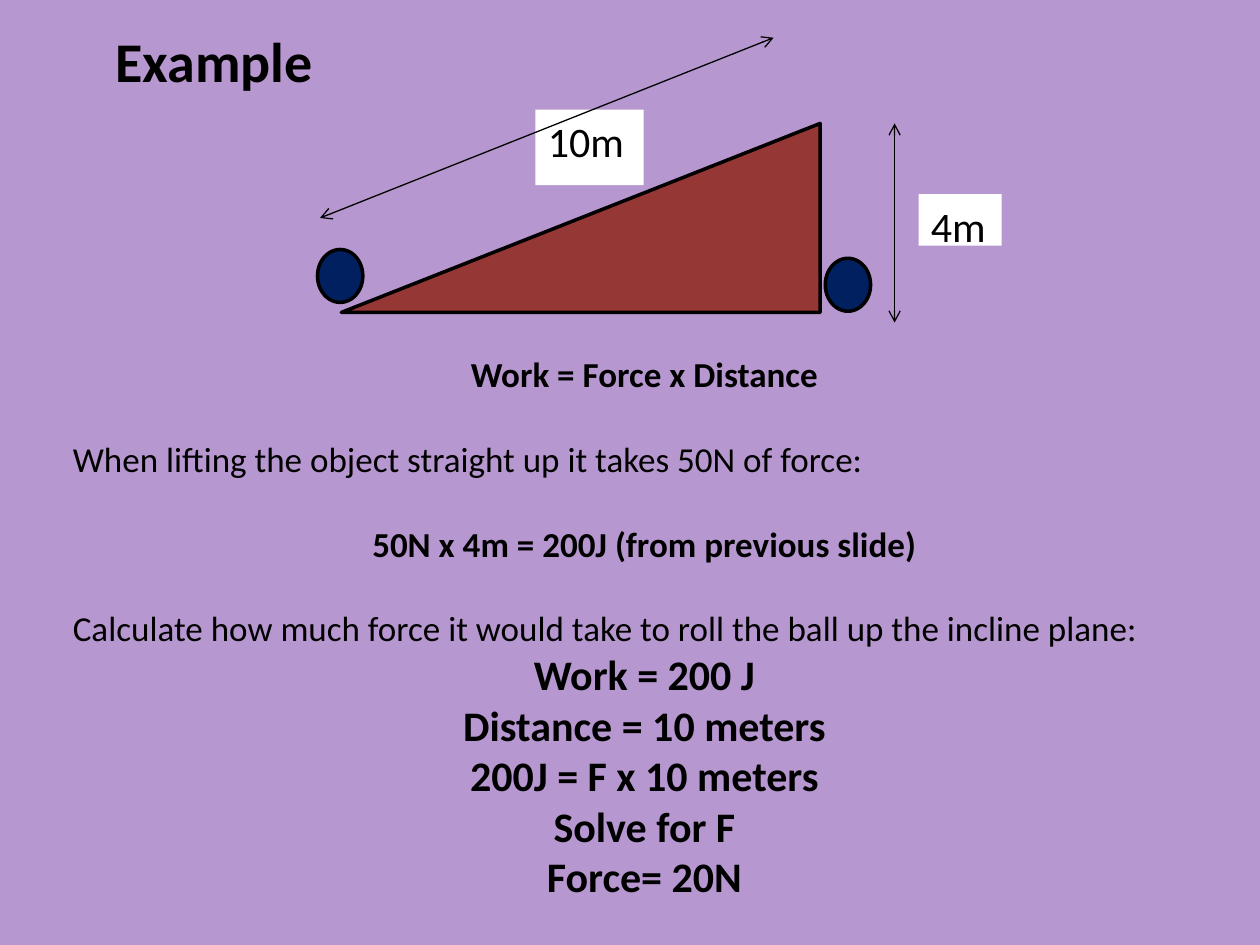
from lxml import etree
from pptx import Presentation
from pptx.dml.color import RGBColor
from pptx.enum import shapes, text
from pptx.oxml.ns import qn
from pptx.util import Inches, Pt

BLACK = RGBColor(0, 0, 0)
WHITE = RGBColor(255, 255, 255)
LILAC = RGBColor(0xB7, 0x97, 0xCF)
BROWN = RGBColor(0x95, 0x37, 0x35)
NAVY = RGBColor(0x00, 0x20, 0x60)

KIND = shapes.MSO_SHAPE
LEFT, MID = text.PP_ALIGN.LEFT, text.PP_ALIGN.CENTER
BALL = (0.36, 0.42)
GAP = 24.4  # one blank 20 pt line

# Text, size, bold, alignment, space before
STEPS = [
    ("Work = Force x Distance", 20, True, MID, 0),
    ("When lifting the object straight up it takes 50N of force:",
     20, False, LEFT, GAP),
    ("50N x 4m = 200J (from previous slide)", 20, True, MID, GAP),
    ("Calculate how much force it would take to roll the ball up "
     "the incline plane:", 20, False, LEFT, GAP),
] + [(line, 24, True, MID, 0) for line in (
    "Work = 200 J", "Distance = 10 meters", "200J = F x 10 meters",
    "Solve for F", "Force= 20N")]


def write(frame, lines):
    frame.word_wrap = True
    frame.vertical_anchor = text.MSO_ANCHOR.TOP
    for i, (words, size, bold, align, gap) in enumerate(lines):
        para = frame.add_paragraph() if i else frame.paragraphs[0]
        para.alignment, para.space_before = align, Pt(gap)
        run = para.add_run()
        run.text = words
        looks = {"name": "Calibri", "size": Pt(size), "bold": bold}
        for key, value in looks.items():
            setattr(run.font, key, value)
        run.font.color.rgb = BLACK


def add_form(parts, kind, box, fill, edge=True):
    form = parts.add_shape(kind, *map(Inches, box))
    form.shadow.inherit = False
    form.fill.solid()
    form.fill.fore_color.rgb = fill
    if edge:
        form.line.color.rgb = BLACK
        form.line.width = Pt(2)
    else:
        form.line.fill.background()
    return form


def add_label(parts, box, words):
    form = add_form(parts, KIND.RECTANGLE, box, WHITE, edge=False)
    write(form.text_frame, [(words, 24, False, LEFT, 0)])


def add_span(parts, start, end):
    """Dimension line with an open arrowhead at both ends."""
    line = parts.add_connector(shapes.MSO_CONNECTOR.STRAIGHT,
                               *map(Inches, start + end))
    line.line.color.rgb = BLACK
    line.line.width = Pt(0.75)
    for tag in ("a:headEnd", "a:tailEnd"):
        etree.SubElement(line.line._get_or_add_ln(), qn(tag), type="arrow")
    etree.SubElement(line.element.spPr, qn("a:effectLst"))


def add_text(parts, box, lines):
    write(parts.add_textbox(*map(Inches, box)).text_frame, lines)


def main():
    deck = Presentation()
    deck.slide_width, deck.slide_height = Inches(10), Inches(7.5)
    slide = deck.slides.add_slide(deck.slide_layouts[6])
    slide.background.fill.solid()
    slide.background.fill.fore_color.rgb = LILAC

    # Ramp diagram
    parts = slide.shapes.add_group_shape().shapes
    ramp = add_form(parts, KIND.RIGHT_TRIANGLE, (2.71, 0.98, 3.8, 1.5), BROWN)
    ramp.element.spPr.xfrm.set("flipH", "1")
    add_form(parts, KIND.OVAL, (2.52, 1.98) + BALL, NAVY)
    add_label(parts, (4.25, 0.87, 0.86, 0.6), "10m")
    add_span(parts, (2.54, 1.73), (6.14, 0.3))
    add_label(parts, (7.29, 1.54, 0.66, 0.41), "4m")
    add_span(parts, (7.1, 0.98), (7.1, 2.56))
    add_form(parts, KIND.OVAL, (6.55, 2.05) + BALL, NAVY)

    # Worked steps and title
    add_text(slide.shapes, (0.48, 2.75, 9.27, 4.48), STEPS)
    add_text(slide.shapes, (0.2, 0.16, 3, 0.64),
             [("Example", 32, True, MID, 0)])
    deck.save("out.pptx")


if __name__ == "__main__":
    main()
